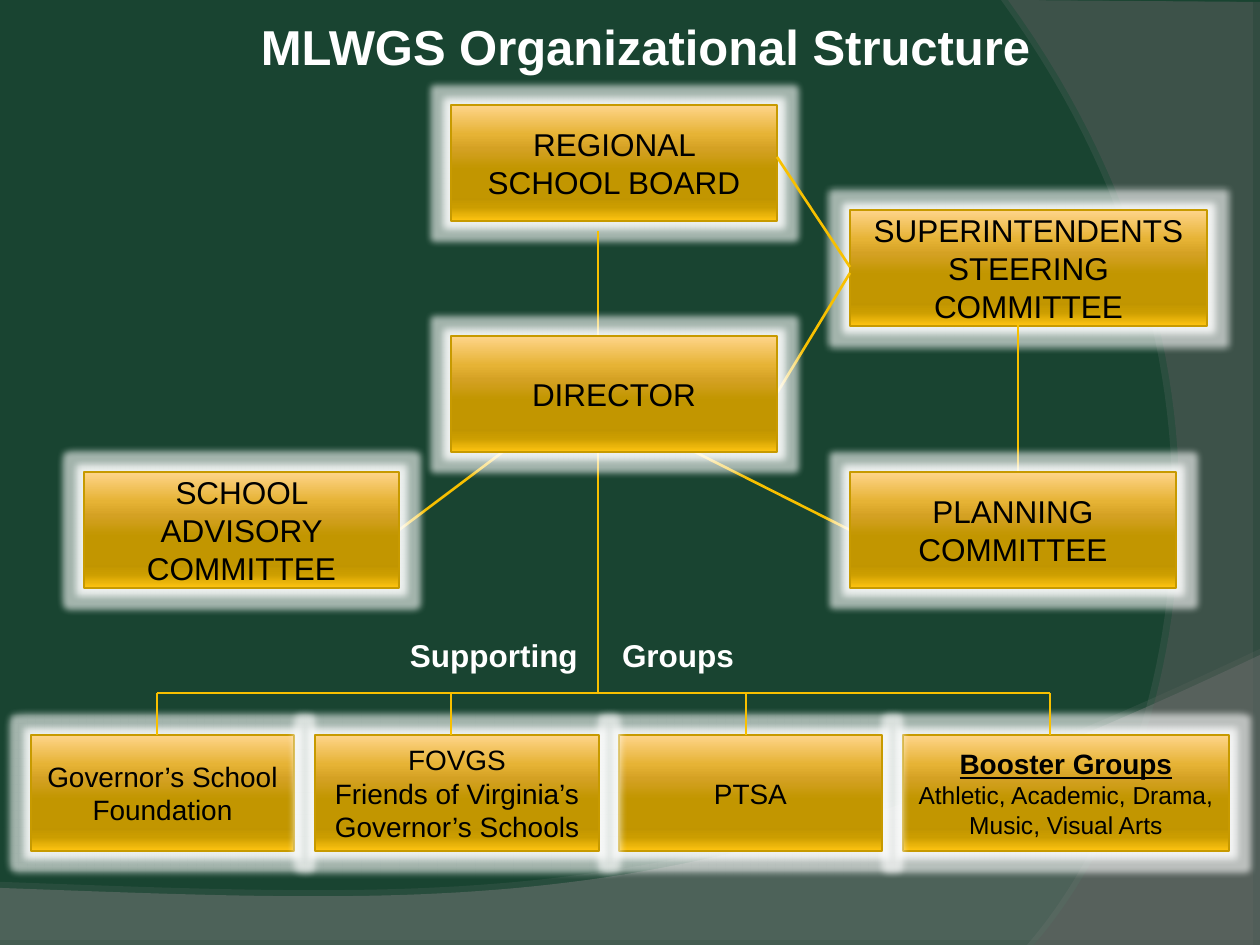
from pptx import Presentation, util as u
from pptx.dml.color import RGBColor
from pptx.enum import shapes as sh, text as tx
from pptx.oxml import parse_xml

SCALE = 914400 / 126  # EMU in one px
GREEN = RGBColor(0x19, 0x44, 0x31)
GRAY = RGBColor(0x7C, 0x7C, 0x7C)
DARK = RGBColor(0x59, 0x59, 0x59)
GOLD = RGBColor(0xF8, 0xC0, 0x00)
EDGE = RGBColor(0xC7, 0x9A, 0x00)
BLACK = RGBColor(0, 0, 0)
WHITE = RGBColor(255, 255, 255)
NS = 'xmlns:a="http://schemas.openxmlformats.org/drawingml/2006/main"'
STOPS = [(0, "FFD58B"), (25, "E6B335"), (38, "D4A123"), (55, "C29600"),
         (80, "C19500"), (88, "CB9D00"), (100, "FFC411")]
GRAD = (f'<a:gradFill {NS} rotWithShape="1"><a:gsLst>'
        + "".join(f'<a:gs pos="{p * 1000}"><a:srgbClr val="{c}"/></a:gs>' for p, c in STOPS)
        + '</a:gsLst><a:lin ang="5400000" scaled="0"/></a:gradFill>')
GLOW = (f'<a:effectLst {NS}><a:glow rad="101600"><a:srgbClr val="FFFFFF">'
        '<a:alpha val="60000"/></a:srgbClr></a:glow>'
        '<a:outerShdw blurRad="63500" sx="103000" sy="107000" algn="ctr" rotWithShape="0">'
        '<a:srgbClr val="FFFFFF"><a:alpha val="60000"/></a:srgbClr></a:outerShdw></a:effectLst>')
PLAIN = f"<a:effectLst {NS}/>"


def px(n):
    return u.Emu(round(n * SCALE))


def write(par, words, size, color, **more):
    par.alignment = tx.PP_ALIGN.CENTER
    run = par.add_run()
    run.text = words
    run.font.color.rgb = color
    for key, val in {"name": "Arial", "size": u.Pt(size), **more}.items():
        setattr(run.font, key, val)


prs = Presentation()
prs.slide_width, prs.slide_height = px(1260), px(945)
slide = prs.slides.add_slide(prs.slide_layouts[6])
slide.background.fill.solid()
slide.background.fill.fore_color.rgb = GREEN
tree = slide.shapes

# Background waves: straight corners, then one curve (its four Bezier points)
waves = [
    ([(0, 888), (0, 946), (1260, 946)],
     [(1260, 655), (704, 919), (493, 906), (0, 888)], GRAY, 45, (35, 44450, 270)),
    ([(1260, 2), (1260, 945)],
     [(1034, 945), (1178, 780), (1283, 378), (1008, 0)], DARK, 40, (45, 50800, 180)),
]
for corners, curve, color, alpha, (dim, dist, turn) in waves:
    pts = list(corners)
    for i in range(61):
        t = i / 60
        mix = ((1 - t) ** 3, 3 * t * (1 - t) ** 2, 3 * t * t * (1 - t), t ** 3)
        pts.append(tuple(sum(m * p[k] for m, p in zip(mix, curve)) for k in (0, 1)))
    pts = [(px(x), px(y)) for x, y in pts]
    form = tree.build_freeform(*pts[0], scale=1.0)
    form.add_line_segments(pts[1:], close=True)
    wave = form.convert_to_shape()
    wave.fill.solid()
    wave.fill.fore_color.rgb = color
    tint = wave.fill._xPr.solidFill[0]
    tint.append(parse_xml(f'<a:alpha {NS} val="{alpha * 1000}"/>'))
    wave.line.fill.background()
    wave._element.spPr.append(parse_xml(
        f'<a:effectLst {NS}><a:outerShdw dist="{dist}" dir="{turn * 60000}" algn="ctr" '
        f'rotWithShape="0"><a:srgbClr val="808080"><a:alpha val="{dim * 1000}"/>'
        '</a:srgbClr></a:outerShdw></a:effectLst>'))

# Chart parts from back to front: boxes hold (left, top, width, lines, size)
ROW = 735
back = [
    (850, 210, 357, ["SUPERINTENDENTS STEERING COMMITTEE"], 18),
    (451, 105, 326, ["REGIONAL SCHOOL BOARD"], 18),
    (31, ROW, 263, ["Governor’s School Foundation"], 16),
    (903, ROW, 326, ["Booster Groups", "Athletic, Academic, Drama, Music, Visual Arts"], 16),
    (619, ROW, 263, ["PTSA"], 16),
    (315, ROW, 284, ["FOVGS", "Friends of Virginia’s Governor’s Schools"], 16),
]
links = [(157, 693, 1050, 693), (598, 231, 598, 693)]
links += [(x, ROW, x, 693) for x in (157, 451, 746, 1050)]
links += [(693, 451, 850, 530), (777, 157, 850, 267), (850, 273, 777, 393),
          (1018, 325, 1018, 472), (504, 451, 399, 530)]
front = [
    (850, 472, 326, ["PLANNING COMMITTEE"], 18),
    (84, 472, 315, ["SCHOOL ADVISORY COMMITTEE"], 18),
    (451, 336, 326, ["DIRECTOR"], 18),
]
for part in back + links + front:
    if len(part) == 4:
        link = tree.add_connector(sh.MSO_CONNECTOR.STRAIGHT, *map(px, part))
        link.line.color.rgb = GOLD
        link.line.width = u.Pt(1.5)
        link._element.spPr.append(parse_xml(PLAIN))
        continue
    left, top, width, lines, size = part
    box = tree.add_shape(sh.MSO_SHAPE.RECTANGLE, px(left), px(top), px(width), px(116))
    box._element.spPr.append(parse_xml(GRAD))
    box.line.color.rgb = EDGE
    box.line.width = u.Pt(0.75)
    box._element.spPr.append(parse_xml(GLOW))
    frame = box.text_frame
    frame.vertical_anchor = tx.MSO_ANCHOR.MIDDLE
    for i, words in enumerate(lines):
        par = frame.add_paragraph() if i else frame.paragraphs[0]
        head = words == "Booster Groups"
        small = words.startswith("Athletic")
        write(par, words, 14 if small else size, BLACK, bold=head, underline=head)

# Title and the label on both sides of the trunk line
labels = [
    (105, 10, 1081, 72, "MLWGS Organizational Structure", 28),
    (368, 630, 410, 50, "Supporting\tGroups", 18),
]
for left, top, width, height, words, size in labels:
    label = tree.add_textbox(px(left), px(top), px(width), px(height))
    label.text_frame.word_wrap = True
    par = label.text_frame.paragraphs[0]
    write(par, words, size, WHITE, bold=True)
    if "\t" in words:
        label.text_frame.margin_left = px(42)
        par.alignment = tx.PP_ALIGN.LEFT
        par._p.get_or_add_pPr().append(parse_xml(
            f'<a:tabLst {NS}><a:tab pos="{px(212)}" algn="l"/></a:tabLst>'))

prs.save("out.pptx")
